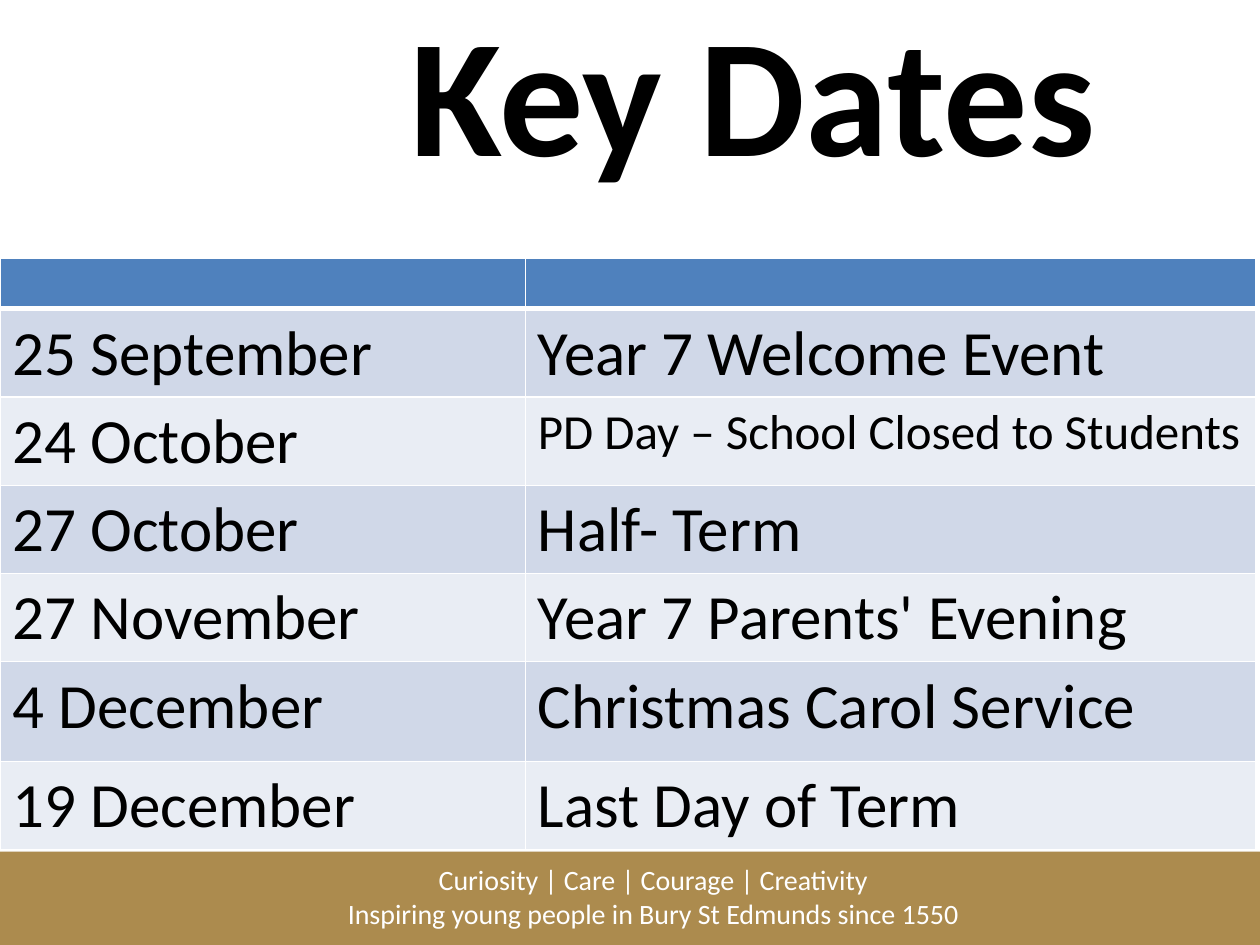
from lxml import etree
from pptx import Presentation
from pptx.dml.color import RGBColor
from pptx.enum.shapes import MSO_SHAPE
from pptx.enum.text import MSO_ANCHOR, PP_ALIGN
from pptx.oxml import parse_xml
from pptx.oxml.ns import nsdecls
from pptx.util import Inches, Pt

RECT = MSO_SHAPE.RECTANGLE
CENTER = PP_ALIGN.CENTER
TOP, MIDDLE = MSO_ANCHOR.TOP, MSO_ANCHOR.MIDDLE

WHITE = RGBColor(0xFF, 0xFF, 0xFF)
BLACK = RGBColor(0, 0, 0)
GOLD = RGBColor(0xAC, 0x8B, 0x4E)
BLUE = RGBColor(0x4F, 0x81, 0xBD)
BANDS = (RGBColor(0xD0, 0xD8, 0xE8), RGBColor(0xE9, 0xED, 0xF4))

COLS, ROWS = 100, 75
DATES = [
    ("25 September", "Year 7 Welcome Event"),
    ("24 October", "PD Day – School Closed to Students"),
    ("27 October", "Half- Term"),
    ("27 November", "Year 7 Parents' Evening"),
    ("4 December", "Christmas Carol Service"),
    ("19 December", "Last Day of Term"),
]
SMALL_ROW = 2
COL_WIDTHS = (41.7, 58)
ROW_HEIGHTS = (3.8, 6.6, 6.6, 6.6, 7, 7.9, 6.6)


class SlideBuilder:
    font = "Calibri"

    def __init__(self, prs):
        self.cell_w = prs.slide_width / COLS
        self.cell_h = prs.slide_height / ROWS
        self.s = prs.slides.add_slide(prs.slide_layouts[6])

    def x(self, cols):
        return round(cols * self.cell_w)

    def y(self, rows):
        return round(rows * self.cell_h)

    def box(self, left, top, width, height):
        return self.x(left), self.y(top), self.x(width), self.y(height)

    def style(self, tf, size, color, bold=False, align=None):
        for p in tf.paragraphs:
            p.alignment = align
            for r in p.runs:
                r.font.name = self.font
                r.font.size = Pt(size)
                r.font.bold = bold
                r.font.color.rgb = color

    def bar(self, place, color):
        sp = self.s.shapes.add_shape(RECT, *self.box(*place))
        sp.fill.solid()
        sp.fill.fore_color.rgb = color
        sp.line.fill.background()
        sp.shadow.inherit = False
        effects = sp._element.spPr.find("{*}effectLst")
        effects.append(parse_xml(
            f'<a:outerShdw {nsdecls("a")} blurRad="{Pt(3.1)}" dist="{Pt(1.8)}" '
            'dir="5400000" rotWithShape="0"><a:srgbClr val="000000">'
            '<a:alpha val="35000"/></a:srgbClr></a:outerShdw>'))

    def text(self, place, text, size, color, bold=False, anchor=TOP):
        sp = self.s.shapes.add_textbox(*self.box(*place))
        tf = sp.text_frame
        tf.word_wrap = True
        tf.vertical_anchor = anchor
        tf.text = text
        self.style(tf, size, color, bold, CENTER)

    def border(self, cell, side, width):
        tc_pr = cell._tc.get_or_add_tcPr()
        ln = etree.SubElement(tc_pr, tc_pr.tag.replace("tcPr", f"ln{side}"), w=str(Pt(width)))
        ln.append(parse_xml(
            f'<a:solidFill {nsdecls("a")}><a:srgbClr val="{WHITE}"/></a:solidFill>'))

    def cell(self, cell, text, size, fill, bottom=1, top=1):
        for side, width in (("L", 1), ("R", 1), ("T", top), ("B", bottom)):
            self.border(cell, side, width)
        cell.fill.solid()
        cell.fill.fore_color.rgb = fill
        if text:
            cell.text_frame.text = text
            self.style(cell.text_frame, size, BLACK)

    def table(self, left, top, widths, heights, rows):
        place = self.box(left, top, sum(widths), sum(heights))
        table = self.s.shapes.add_table(len(heights), len(widths), *place).table
        for col, width in zip(table.columns, widths):
            col.width = self.x(width)
        for row, height in zip(table.rows, heights):
            row.height = self.y(height)
        for c in range(len(widths)):
            self.cell(table.cell(0, c), "", 18, BLUE, bottom=3)
        for i, row in enumerate(rows, 1):
            for c, text in enumerate(row):
                size = 28 if (i, c) == (SMALL_ROW, 1) else 36
                self.cell(table.cell(i, c), text, size, BANDS[(i - 1) % 2],
                          top=3 if i == 1 else 1)


def main():
    prs = Presentation()
    prs.slide_width, prs.slide_height = Inches(10), Inches(7.5)
    b = SlideBuilder(prs)
    b.bar((0, 67.6, COLS, 7.4), GOLD)
    b.text((11.4, 68, 80.9, 6.4),
           "Curiosity | Care | Courage | Creativity\n"
           "Inspiring young people in Bury St Edmunds since 1550", 16, WHITE)
    b.text((24.5, 0.8, 70.5, 12.5), "Key Dates", 96, BLACK, bold=True, anchor=MIDDLE)
    b.table(0, 20.5, COL_WIDTHS, ROW_HEIGHTS, DATES)
    prs.save("out.pptx")


if __name__ == "__main__":
    main()
